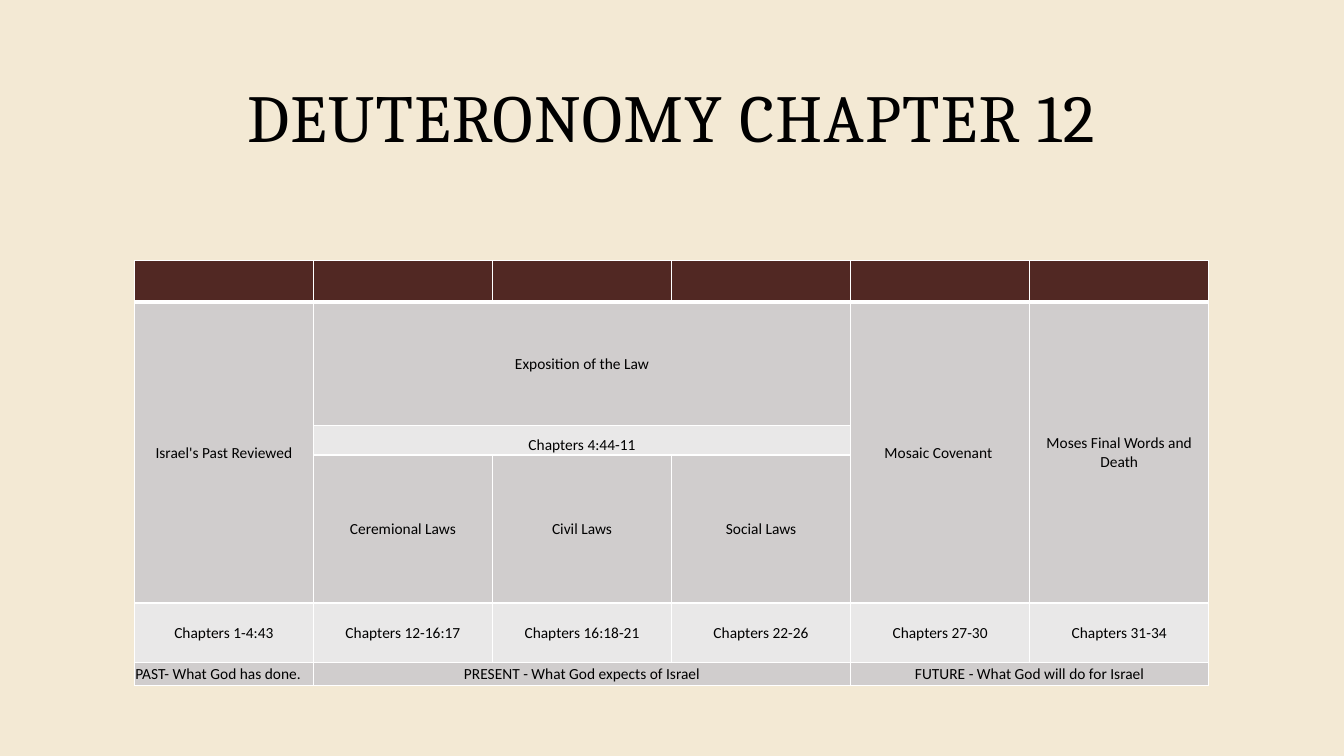
"""Build a slide with an outline table of the book of Deuteronomy."""
from lxml.etree import SubElement
from pptx import Presentation
from pptx.dml.color import RGBColor
from pptx.enum.text import MSO_ANCHOR as Anchor, PP_ALIGN as Align
from pptx.oxml.ns import qn
from pptx.util import Pt


def color(value):
    return RGBColor.from_string(value)


def add_border(cell, side, width):
    line = SubElement(cell._tc.get_or_add_tcPr(), qn(f"a:{side}"), w=str(Pt(width)))
    fill = SubElement(line, qn("a:solidFill"))
    SubElement(fill, qn("a:srgbClr"), val="FFFFFF")


MAROON, GRAY, LIGHT = "512823", "D0CDCD", "E9E8E8"
ROW_FILLS = [MAROON, GRAY, LIGHT, GRAY, LIGHT, GRAY]
ROW_HEIGHTS = [29.5, 88.6, 20.9, 105.8, 42.5, 16.6]
COLUMN_WIDTH = 127.92
TEXTS = [
    [""] * 6,
    ["Israel's Past Reviewed", "Exposition of the Law", "", "",
     "Mosaic Covenant ", "Moses Final Words and Death"],
    ["", "Chapters 4:44-11", "", "", "", ""],
    ["", "Ceremional Laws", "Civil Laws", "Social Laws", "", ""],
    ["Chapters 1-4:43", "Chapters 12-16:17", "Chapters 16:18-21",
     "Chapters 22-26", "Chapters 27-30", "Chapters 31-34"],
    ["PAST- What God has done.", "PRESENT - What God expects of Israel", "", "",
     "FUTURE - What God will do for Israel", ""],
]
MERGES = [(1, 0, 3, 0), (1, 1, 1, 3), (1, 4, 3, 4), (1, 5, 3, 5),
          (2, 1, 2, 3), (5, 1, 5, 3), (5, 4, 5, 5)]

presentation = Presentation()
presentation.slide_width, presentation.slide_height = Pt(960), Pt(540)
slide = presentation.slides.add_slide(presentation.slide_layouts[5])
slide.background.fill.solid()
slide.background.fill.fore_color.rgb = color("F3E9D4")

title = slide.shapes.title
title.left, title.top, title.width, title.height = Pt(96), Pt(50.4), Pt(767.5), Pt(128)
title.text_frame.text = "DEUTERONOMY CHAPTER 12"
title.text_frame.vertical_anchor = Anchor.TOP
paragraph = title.text_frame.paragraphs[0]
paragraph.alignment = Align.CENTER
paragraph.font.name, paragraph.font.size = "Cambria", Pt(48)
paragraph.font.color.rgb = color("000000")
paragraph.runs[0]._r.get_or_add_rPr().set("spc", "100")

table = slide.shapes.add_table(6, 6, Pt(96), Pt(186), Pt(COLUMN_WIDTH * 6),
                               Pt(sum(ROW_HEIGHTS))).table
table.horz_banding = False
for column in table.columns:
    column.width = Pt(COLUMN_WIDTH)

for row_index, texts in enumerate(TEXTS):
    table.rows[row_index].height = Pt(ROW_HEIGHTS[row_index])
    for column_index, text in enumerate(texts):
        cell = table.cell(row_index, column_index)
        cell.text = text
        cell.vertical_anchor = Anchor.BOTTOM if row_index == 2 else Anchor.MIDDLE
        cell.margin_left = cell.margin_right = cell.margin_top = Pt(0.7)
        cell.margin_bottom = Pt(0)
        paragraph = cell.text_frame.paragraphs[0]
        is_past = (row_index, column_index) == (5, 0)
        paragraph.alignment = Align.LEFT if is_past else Align.CENTER
        paragraph.font.name, paragraph.font.size = "Calibri", Pt(11)
        paragraph.font.color.rgb = color("000000")
        add_border(cell, "lnL", 1)
        add_border(cell, "lnR", 1)
        add_border(cell, "lnT", 3 if row_index == 1 else 1)
        add_border(cell, "lnB", 3 if row_index == 0 else 1)
        cell.fill.solid()
        cell.fill.fore_color.rgb = color(ROW_FILLS[row_index])

for top, left, bottom, right in MERGES:
    table.cell(top, left).merge(table.cell(bottom, right))

presentation.save("out.pptx")
